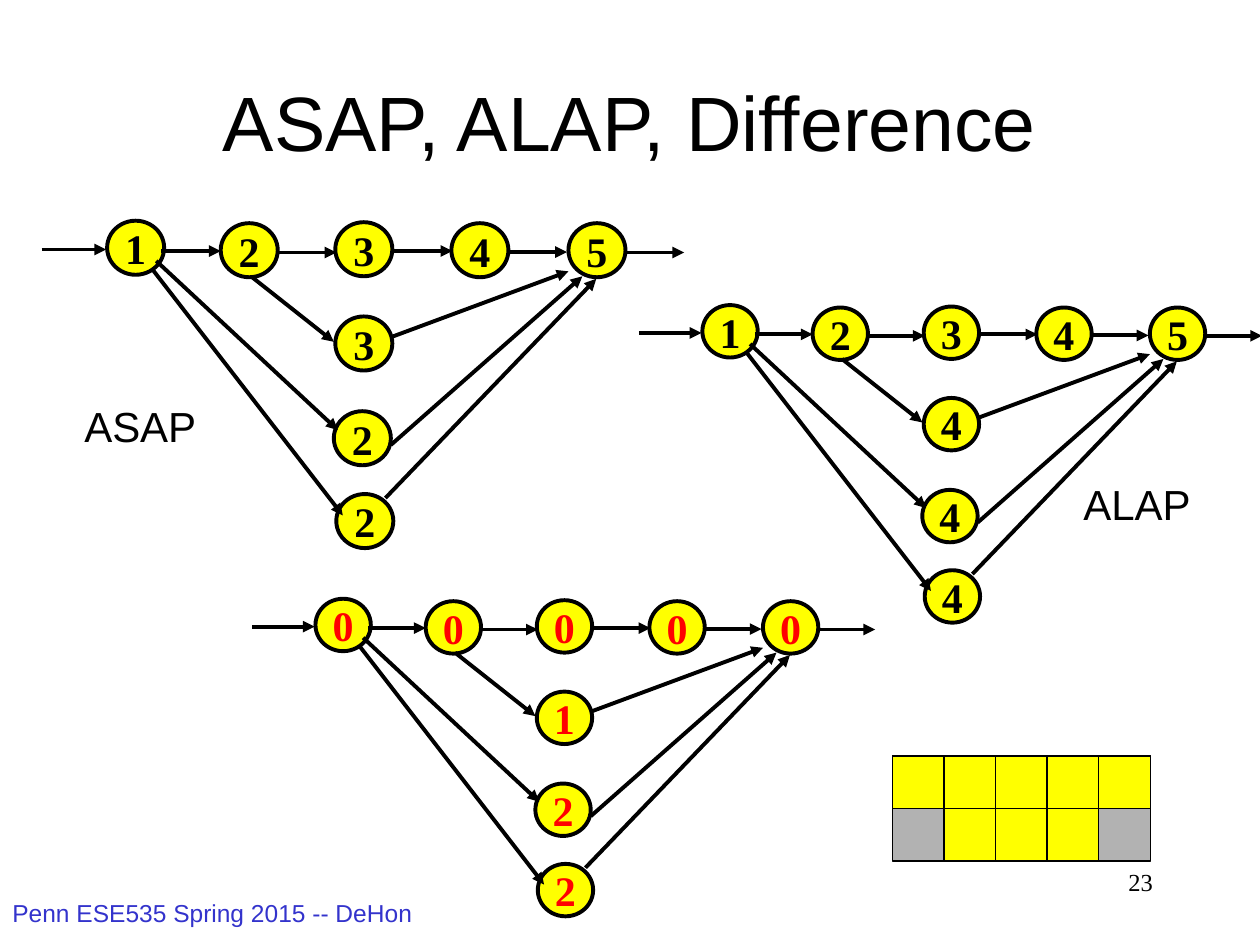
import dataclasses
from typing import Any

import pptx
import pptx.dml.color
import pptx.enum.shapes
import pptx.enum.text
import pptx.oxml
import pptx.oxml.ns
import pptx.util
from pptx.util import Cm

COLORS = {
    "black": "000000",
    "yellow": "FFFF00",
    "red": "FF0000",
    "gray": "B2B2B2",
    "blue": "3333CC",
}
ALIGN = pptx.enum.text.PP_ALIGN
ANCHOR = pptx.enum.text.MSO_ANCHOR
SHAPE = pptx.enum.shapes.MSO_SHAPE
NODE_WIDTH, NODE_HEIGHT = 1.15, 1.09
CELL_WIDTH, CELL_HEIGHT = 1.04, 1.06


@dataclasses.dataclass
class Edge:
    x1: float
    y1: float
    x2: float
    y2: float


@dataclasses.dataclass
class Graph:
    left: float
    top: float
    scale: float
    labels: str
    color: str


@dataclasses.dataclass
class Label:
    text: str
    left: float
    top: float
    width: float
    height: float
    size: int
    font: str = "Arial"
    color: str = "black"
    align: Any = ALIGN.LEFT
    wrap: bool = True


NODES = [
    (1.32, 0), (3.61, 0.05), (5.92, 0.03), (8.26, 0.05), (10.62, 0.05),
    (5.92, 1.93), (5.89, 3.84), (5.94, 5.51),
]
EDGES = [
    Edge(0, 0.58, 1.3, 0.58),
    Edge(2.41, 0.61, 3.61, 0.61),
    Edge(4.75, 0.64, 5.94, 0.64),
    Edge(7.09, 0.61, 8.28, 0.61),
    Edge(9.4, 0.63, 10.59, 0.63),
    Edge(11.76, 0.64, 12.95, 0.64),
    Edge(4.22, 1.12, 5.89, 2.44),
    Edge(7.06, 2.34, 10.62, 1.02),
    Edge(7.04, 4.52, 10.9, 1.12),
    Edge(2.31, 0.81, 5.97, 4.22),
    Edge(2.24, 0.99, 6.07, 5.94),
    Edge(6.93, 5.59, 11.18, 1.17),
]
GRAPHS = [
    Graph(0.84, 4.45, 1, "12345322", "black"),
    Graph(12.88, 6.15, 0.97, "12345444", "black"),
    Graph(5.08, 12.07, 0.97, "00000122", "red"),
]
LABELS = [
    Label("Penn ESE535 Spring 2015 -- DeHon", 0, 17.98, 9.73, 1.07, 14, color="blue"),
    Label("23", 18.21, 17.35, 5.28, 1.27, 14, "Times New Roman", align=ALIGN.RIGHT),
    Label("ASAP", 1.45, 7.95, 2.77, 1.27, 24, wrap=False),
    Label("ALAP", 21.59, 9.53, 2.67, 1.27, 24, wrap=False),
]


def rgb(name: str) -> pptx.dml.color.RGBColor:
    return pptx.dml.color.RGBColor.from_string(COLORS[name])


def apply_format(target: Any, values: dict[str, Any]) -> None:
    for name, value in values.items():
        setattr(target, name, value)


def write_text(shape: Any, text: str, size: int, font: str, color: str,
               align: Any, bold: bool = False) -> None:
    paragraph = shape.text_frame.paragraphs[0]
    paragraph.alignment = align
    run = paragraph.add_run()
    run.text = text
    apply_format(run.font, {"size": pptx.util.Pt(size), "name": font, "bold": bold})
    run.font.color.rgb = rgb(color)


def draw_shape(shapes: Any, kind: Any, left: float, top: float, width: float,
               height: float, fill: str, line_width: float) -> Any:
    shape = shapes.add_shape(kind, Cm(left), Cm(top), Cm(width), Cm(height))
    shape.shadow.inherit = False
    shape.fill.solid()
    shape.fill.fore_color.rgb = rgb(fill)
    shape.line.color.rgb = rgb("black")
    shape.line.width = pptx.util.Pt(line_width)
    return shape


def draw_arrow(shapes: Any, x1: float, y1: float, x2: float, y2: float) -> None:
    connector = shapes.add_connector(
        pptx.enum.shapes.MSO_CONNECTOR.STRAIGHT, Cm(x1), Cm(y1), Cm(x2), Cm(y2))
    connector.line.color.rgb = rgb("black")
    connector.line.width = pptx.util.Pt(2.25)
    head = pptx.oxml.parse_xml(
        f'<a:tailEnd {pptx.oxml.ns.nsdecls("a")} type="triangle"/>')
    connector.line._get_or_add_ln().append(head)
    effects = pptx.oxml.parse_xml(f'<a:effectLst {pptx.oxml.ns.nsdecls("a")}/>')
    connector._element.spPr.append(effects)


def draw_graph(slide: Any, graph: Graph) -> None:
    shapes = slide.shapes.add_group_shape().shapes
    scale = graph.scale
    for (x, y), label in zip(NODES, graph.labels):
        node = draw_shape(shapes, SHAPE.OVAL, graph.left + x * scale, graph.top + y * scale,
                          NODE_WIDTH * scale, NODE_HEIGHT * scale, "yellow", 2.25)
        apply_format(node.text_frame, {
            "word_wrap": False, "vertical_anchor": ANCHOR.MIDDLE})
        write_text(node, label, 24, "Times New Roman", graph.color, ALIGN.CENTER, True)
    for edge in EDGES:
        draw_arrow(shapes, graph.left + edge.x1 * scale, graph.top + edge.y1 * scale,
                   graph.left + edge.x2 * scale, graph.top + edge.y2 * scale)


def draw_label(slide: Any, label: Label) -> None:
    box = slide.shapes.add_textbox(
        Cm(label.left), Cm(label.top), Cm(label.width), Cm(label.height))
    box.text_frame.word_wrap = label.wrap
    write_text(box, label.text, label.size, label.font, label.color, label.align)


def draw_resource_grid(slide: Any, left: float, top: float) -> None:
    shapes = slide.shapes.add_group_shape().shapes
    draw_shape(shapes, SHAPE.RECTANGLE, left, top, 5 * CELL_WIDTH, 2 * CELL_HEIGHT,
               "gray", 0.75)
    for row, columns in enumerate([range(5), range(1, 4)]):
        for column in columns:
            draw_shape(shapes, SHAPE.RECTANGLE, left + column * CELL_WIDTH,
                       top + row * CELL_HEIGHT, CELL_WIDTH, CELL_HEIGHT, "yellow", 0.75)


def main() -> None:
    presentation = pptx.Presentation()
    apply_format(presentation, {"slide_width": Cm(25.4), "slide_height": Cm(19.05)})
    slide = presentation.slides.add_slide(presentation.slide_layouts[5])
    title = slide.shapes.title
    apply_format(title, {
        "left": Cm(1.9), "top": Cm(0.85), "width": Cm(21.6), "height": Cm(3.18)})
    title.text_frame.vertical_anchor = ANCHOR.MIDDLE
    write_text(title, "ASAP, ALAP, Difference", 44, "Arial", "black", ALIGN.CENTER)
    for graph in GRAPHS:
        draw_graph(slide, graph)
    for label in LABELS:
        draw_label(slide, label)
    draw_resource_grid(slide, 17.99, 15.24)
    presentation.save("out.pptx")


if __name__ == "__main__":
    main()
